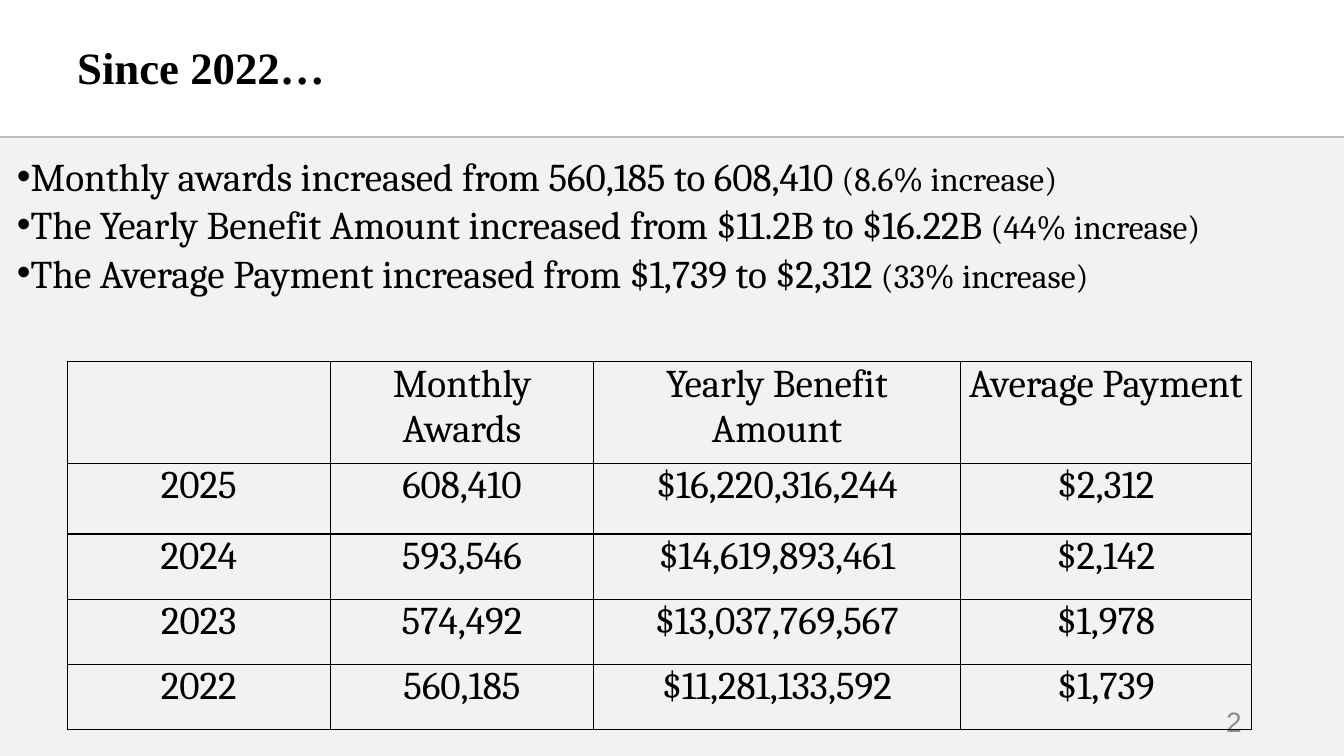
"""Build a slide of benefit growth since 2022 with a table by year."""
from pptx import Presentation
from pptx.dml.color import RGBColor
from pptx.enum.shapes import MSO_CONNECTOR, MSO_SHAPE
from pptx.enum.text import MSO_ANCHOR, MSO_AUTO_SIZE, PP_ALIGN
from pptx.oxml.ns import qn
from pptx.util import Pt
from lxml import etree

LEFT, CENTER, RIGHT = PP_ALIGN.LEFT, PP_ALIGN.CENTER, PP_ALIGN.RIGHT
TOP, MIDDLE = MSO_ANCHOR.TOP, MSO_ANCHOR.MIDDLE
GROW = MSO_AUTO_SIZE.SHAPE_TO_FIT_TEXT
RECT, LINE = MSO_SHAPE.RECTANGLE, MSO_CONNECTOR.STRAIGHT
WIDTH, HEIGHT = 960, 540

POINTS = [
    ("Monthly awards increased from 560,185 to 608,410 ", "(8.6% increase)"),
    ("The Yearly Benefit Amount increased from $11.2B to $16.22B ", "(44% increase)"),
    ("The Average Payment increased from $1,739 to $2,312 ", "(33% increase)"),
]
ROWS = [
    ["", "Monthly Awards", "Yearly Benefit Amount", "Average Payment"],
    ["2025", "608,410", "$16,220,316,244", "$2,312"],
    ["2024", "593,546", "$14,619,893,461", "$2,142"],
    ["2023", "574,492", "$13,037,769,567", "$1,978"],
    ["2022", "560,185", "$11,281,133,592", "$1,739"],
]


def color(value):
    return RGBColor.from_string(value)


def write(para, text, size=28, font="Cambria", tint="000000", bold=False, align=LEFT):
    para.alignment = align
    run = para.add_run()
    run.text = text
    run.font.size = Pt(size)
    run.font.name = font
    run.font.bold = bold
    run.font.color.rgb = color(tint)


class Page:
    def __init__(self, slide, panel="F2F2F2", rule="BFBFBF", ink="000000"):
        self.shapes = slide.shapes
        self.panel, self.rule, self.ink = panel, rule, ink

    def band(self, top):
        box = self.shapes.add_shape(RECT, 0, Pt(top), Pt(WIDTH), Pt(HEIGHT - top))
        box.shadow.inherit = False
        box.fill.solid()
        box.fill.fore_color.rgb = color(self.panel)
        box.line.fill.background()

    def line(self, top):
        link = self.shapes.add_connector(LINE, 0, Pt(top), Pt(WIDTH), Pt(top))
        link.line.color.rgb = color(self.rule)
        link.line.width = Pt(1.5)
        etree.SubElement(link._element.spPr, qn("a:effectLst"))

    def frame(self, area, anchor=TOP):
        frame = self.shapes.add_textbox(*map(Pt, area)).text_frame
        frame.word_wrap = True
        frame.vertical_anchor = anchor
        return frame

    def text(self, area, text, anchor=TOP, fit=None, **style):
        frame = self.frame(area, anchor)
        if fit:
            frame.auto_size = fit
        write(frame.paragraphs[0], text, **style)

    def list(self, area, items):
        frame = self.frame(area)
        for i, (main, note) in enumerate(items):
            para = frame.add_paragraph() if i else frame.paragraphs[0]
            para.space_after = Pt(1)
            props = para._p.get_or_add_pPr()
            etree.SubElement(props, qn("a:buFont"), typeface="Arial")
            etree.SubElement(props, qn("a:buChar"), char="•")
            write(para, main)
            write(para, note, size=24)

    def edge(self, cell):
        props = cell._tc.get_or_add_tcPr()
        for side in ("lnL", "lnR", "lnT", "lnB"):
            edge = etree.SubElement(props, qn("a:" + side), w=str(Pt(1)))
            fill = etree.SubElement(edge, qn("a:solidFill"))
            etree.SubElement(fill, qn("a:srgbClr"), val=self.ink)

    def table(self, left, top, wide, high, rows):
        area = map(Pt, (left, top, sum(wide), sum(high)))
        table = self.shapes.add_table(len(rows), len(wide), *area).table
        table.first_row = table.horz_banding = False
        for col, size in zip(table.columns, wide):
            col.width = Pt(size)
        for row, size, texts in zip(table.rows, high, rows):
            row.height = Pt(size)
            for cell, text in zip(row.cells, texts):
                self.edge(cell)
                cell.fill.background()
                cell.margin_left = cell.margin_right = Pt(5)
                cell.margin_top = cell.margin_bottom = 0
                if text:
                    write(cell.text_frame.paragraphs[0], text, align=CENTER)


def main():
    deck = Presentation()
    deck.slide_width, deck.slide_height = Pt(WIDTH), Pt(HEIGHT)
    page = Page(deck.slides.add_slide(deck.slide_layouts[6]))
    page.band(98.5)
    page.line(98)
    page.text((48, 24.5, 276, 46), "Since 2022…", fit=GROW,
              size=32, font="Times New Roman", bold=True)
    page.list((5, 105, 940, 387), POINTS)
    page.text((678, 500.5, 216, 29), "2", anchor=MIDDLE,
              size=20, font="Arial", tint="8C8C8C", align=RIGHT)
    page.table(48, 258.5, [188, 188, 262, 208], [72.5, 50.5] + [46.5] * 3, ROWS)
    deck.save("out.pptx")


if __name__ == "__main__":
    main()
